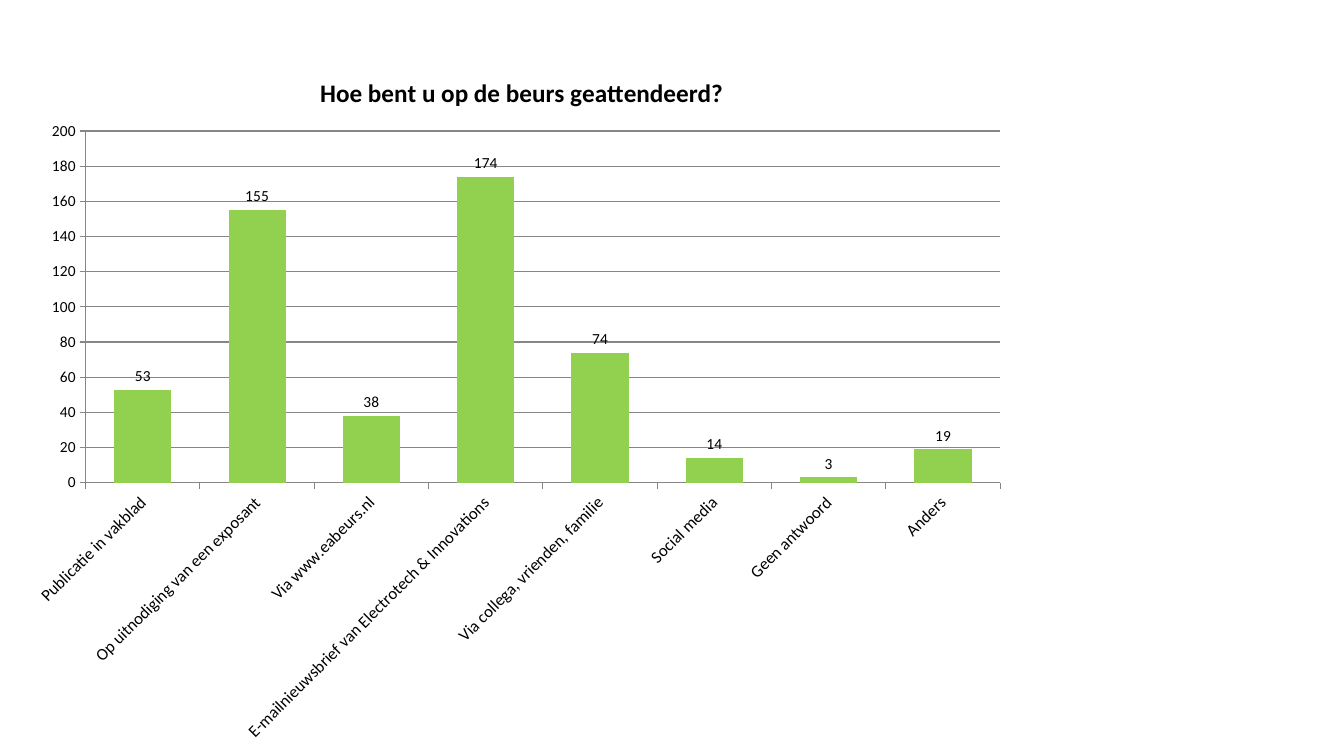
from lxml import etree
from pptx import Presentation
from pptx.chart.data import CategoryChartData
from pptx.dml.color import RGBColor
from pptx.enum.chart import XL_CHART_TYPE, XL_LABEL_POSITION, XL_TICK_MARK
from pptx.oxml import parse_xml
from pptx.oxml.ns import nsdecls, qn
from pptx.util import Inches, Pt

COLUMN = XL_CHART_TYPE.COLUMN_CLUSTERED
OUTSIDE_END = XL_LABEL_POSITION.OUTSIDE_END
TICK_OUT = XL_TICK_MARK.OUTSIDE

TITLE = "Hoe bent u op de beurs geattendeerd?"
ANSWERS = [
    ("Publicatie in vakblad", 53),
    ("Op uitnodiging van een exposant", 155),
    ("Via www.eabeurs.nl", 38),
    ("E-mailnieuwsbrief van Electrotech & Innovations", 174),
    ("Via collega, vrienden, familie", 74),
    ("Social media", 14),
    ("Geen antwoord", 3),
    ("Anders", 19),
]
THEME = {
    "font": "Calibri",
    "text": RGBColor(0x00, 0x00, 0x00),
    "bar": RGBColor(0x92, 0xD0, 0x50),
    "line": RGBColor(0x86, 0x86, 0x86),
    "title": Pt(18),
    "category": Pt(12),
    "value": Pt(11),
    "base": Pt(10),
}
CHART_BOX = (0.17, 0.42, 9.94, 7.08)
PLOT_BOX = (0.85, 1.3, 9.07, 3.49)
TITLE_AT = (3.13, 0.7)


def style_font(font, size, bold=False):
    font.name = THEME["font"]
    font.size = THEME[size]
    font.bold = bold
    font.color.rgb = THEME["text"]


def style_line(fmt):
    fmt.line.color.rgb = THEME["line"]
    fmt.line.width = Pt(0.75)


def manual_layout(place, inner=False):
    left, top, width, height = CHART_BOX
    fractions = [(place[0] - left) / width, (place[1] - top) / height]
    if len(place) == 4:
        fractions += [place[2] / width, place[3] / height]
    layout = parse_xml(f'<c:layout {nsdecls("c")}><c:manualLayout/></c:layout>')
    settings = [("layoutTarget", "inner")] if inner else []
    settings += [("xMode", "edge"), ("yMode", "edge")]
    settings += [(k, f"{v:.4f}") for k, v in zip("xywh", fractions)]
    for name, value in settings:
        etree.SubElement(layout[0], qn(f"c:{name}")).set("val", value)
    return layout


def place_part(parent, layout, after=None):
    for old in parent.findall(qn("c:layout")):
        parent.remove(old)
    if after is None:
        parent.insert(0, layout)
    else:
        parent.find(qn(after)).addnext(layout)


def add_answer_chart(s):
    data = CategoryChartData()
    data.categories = [answer for answer, count in ANSWERS]
    data.add_series("Series 1", [count for answer, count in ANSWERS])
    box = [Inches(v) for v in CHART_BOX]
    chart = s.shapes.add_chart(COLUMN, *box, data).chart
    style_font(chart.font, "base")
    chart.has_legend = False

    chart.has_title = True
    r = chart.chart_title.text_frame.paragraphs[0].add_run()
    r.text = TITLE
    style_font(r.font, "title", True)
    title = chart.chart_title._element
    place_part(title, manual_layout(TITLE_AT), "c:tx")
    chart.chart_title.include_in_layout = False

    plot = chart.plots[0]
    plot.gap_width = 100
    plot.vary_by_categories = False
    plot_area = chart._chartSpace.chart.plotArea
    place_part(plot_area, manual_layout(PLOT_BOX, True))

    bars = plot.series[0]
    bars.format.fill.solid()
    bars.format.fill.fore_color.rgb = THEME["bar"]
    labels = bars.data_labels
    labels.show_value = True
    labels.position = OUTSIDE_END
    style_font(labels.font, "value")

    for axis, size in ((chart.category_axis, "category"), (chart.value_axis, "value")):
        axis.major_tick_mark = TICK_OUT
        style_font(axis.tick_labels.font, size)
        style_line(axis.format)
    body = chart.category_axis._element.find(qn("c:txPr")).find(qn("a:bodyPr"))
    body.set("rot", "-2700000")
    body.set("vert", "horz")

    counts = chart.value_axis
    counts.minimum_scale, counts.maximum_scale, counts.major_unit = 0, 200, 20
    counts.has_major_gridlines = True
    style_line(counts.major_gridlines.format)


def main():
    prs = Presentation()
    prs.slide_width, prs.slide_height = Inches(13.33), Inches(7.5)
    s = prs.slides.add_slide(prs.slide_layouts[6])
    add_answer_chart(s)
    prs.save("out.pptx")


if __name__ == "__main__":
    main()
